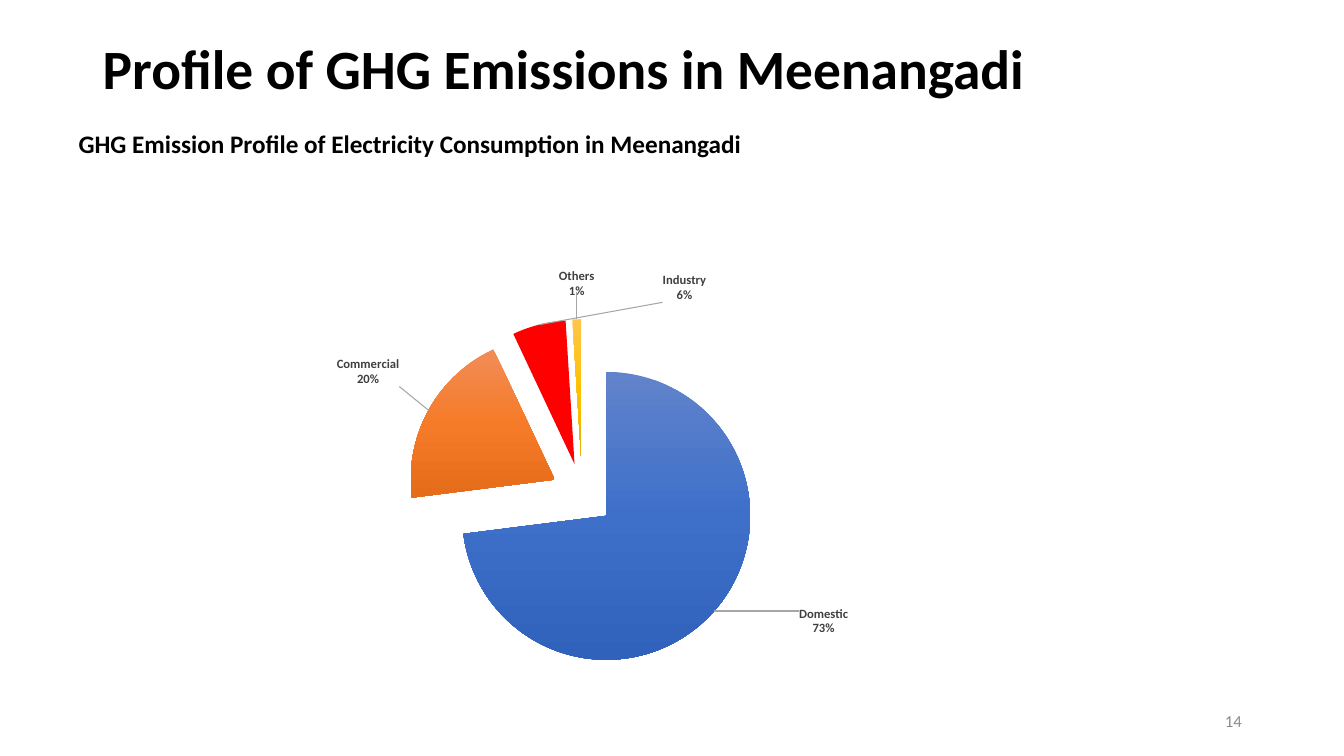
import pptx
import pptx.chart.data
import pptx.dml.color
import pptx.enum.chart
import pptx.enum.text
import pptx.oxml
import pptx.oxml.ns
import pptx.util
import copy
from pptx.util import Cm

COLORS = {"text": "000000", "label": "404040", "number": "8C8C8C", "leader": "A6A6A6"}
FONT = "Calibri"
qn = pptx.oxml.ns.qn


def set_font(font, size, color, bold=False):
    font.name, font.size, font.bold = FONT, pptx.util.Pt(size), bold
    font.color.rgb = pptx.dml.color.RGBColor.from_string(color)


def xml(tag, body="", attrs=""):
    spaces = pptx.oxml.ns.nsdecls("c", "a")
    return pptx.oxml.parse_xml(f"<c:{tag} {spaces} {attrs}>{body}</c:{tag}>")


prs = pptx.Presentation()
prs.slide_width, prs.slide_height = Cm(33.87), Cm(19.05)
s = prs.slides.add_slide(prs.slide_layouts[6])

# Title, subtitle and slide number
MIDDLE, TOP = pptx.enum.text.MSO_ANCHOR.MIDDLE, pptx.enum.text.MSO_ANCHOR.TOP
LEFT, RIGHT = pptx.enum.text.PP_ALIGN.LEFT, pptx.enum.text.PP_ALIGN.RIGHT
texts = [
    ("Profile of GHG Emissions in Meenangadi",
     (2.34, 1.02, 27.2, 1.57), 39.6, "text", True, MIDDLE, LEFT, 0.9),
    ("GHG Emission Profile of Electricity Consumption in Meenangadi",
     (1.73, 3.12, 29.11, 1.02), 18, "text", True, TOP, LEFT, 1.0),
    ("14", (23.93, 17.65, 7.62, 1.02), 12, "number", False, MIDDLE, RIGHT, 1.0),
]
for text, box, size, color, bold, anchor, align, spacing in texts:
    tf = s.shapes.add_textbox(*map(Cm, box)).text_frame
    tf.word_wrap, tf.vertical_anchor = True, anchor
    tf.text = text
    p = tf.paragraphs[0]
    p.alignment, p.line_spacing = align, spacing
    set_font(p.runs[0].font, size, COLORS[color], bold)

# Pie data: name, share, fill colours, label shift as a fraction of the chart
slices = [
    ("Domestic", 0.73, ["6183CB", "3E70CA", "3062BB"], (0.1, -0.02)),
    ("Commercial", 0.2, ["F18C57", "F67B28", "E56C19"], (-0.03, -0.05)),
    ("Industry", 0.06, ["FF0000"], (0.21, -0.04)),
    ("Others", 0.01, ["FFC64B", "FFC000", "E3AB00"], (0, -0.05)),
]
data = pptx.chart.data.CategoryChartData(number_format="0%")
data.categories = [item[0] for item in slices]
data.add_series("Series 1", [item[1] for item in slices])
chart = s.shapes.add_chart(pptx.enum.chart.XL_CHART_TYPE.PIE, Cm(4.14), Cm(6.78),
                           Cm(20.27), Cm(10.54), data).chart
chart.has_title = chart.has_legend = False
set_font(chart.font, 10, COLORS["text"])
plot = chart.plots[0]
plot.vary_by_categories = True
series = plot.series[0]
ser = series._element

# Labels shared by all slices
labels = series.data_labels
labels.show_value = labels.show_category_name = True
labels.show_percentage = False
labels.number_format, labels.number_format_is_linked = "0%", False
labels.position = pptx.enum.chart.XL_LABEL_POSITION.OUTSIDE_END
set_font(labels.font, 9, COLORS["label"], True)

# Slice fills and label places
for i, (name, share, fills, (dx, dy)) in enumerate(slices):
    point = series.points[i]
    point.format.line.fill.background()
    fill = point.format.fill
    if len(fills) == 1:
        fill.solid()
        fill.fore_color.rgb = pptx.dml.color.RGBColor.from_string(fills[0])
    else:
        fill.gradient()
        fill.gradient_angle = 270
        stops = list(ser.iter(qn("a:gsLst")))[-1]
        stops.insert(1, copy.deepcopy(stops[0]))
        for stop, position, color in zip(fill.gradient_stops, (0, 0.5, 1), fills):
            stop.position = position
            stop.color.rgb = pptx.dml.color.RGBColor.from_string(color)

    label = point.data_label
    set_font(label.font, 9, COLORS["label"], True)
    label.position = pptx.enum.chart.XL_LABEL_POSITION.OUTSIDE_END
    d = list(ser.iter(qn("c:dLbl")))[-1]
    d.insert(1, xml("layout", f'<c:manualLayout><c:x val="{dx}"/><c:y val="{dy}"/></c:manualLayout>'))
    d.insert(2, xml("numFmt", attrs='formatCode="0%" sourceLinked="0"'))
    d.find(qn("c:showCatName")).set("val", "1")
    d.append(xml("separator", "\n"))

# Leader lines
group = ser.find(qn("c:dLbls"))
for old in group.findall(qn("c:showLeaderLines")):
    group.remove(old)
group.append(xml("separator", "\n"))
group.append(xml("showLeaderLines", attrs='val="1"'))
group.append(xml("leaderLines", '<c:spPr><a:ln w="9525"><a:solidFill><a:srgbClr val="'
                 + COLORS["leader"] + '"/></a:solidFill></a:ln></c:spPr>'))

# Pulled-out slices and plot area
ser.find(qn("c:dPt")).addprevious(xml("explosion", attrs='val="22"'))
area = next(chart._chartSpace.iter(qn("c:plotArea")))
for old in area.findall(qn("c:layout")):
    area.remove(old)
places = "".join(f'<c:{k} val="{v}"/>' for k, v in [
    ("layoutTarget", "inner"), ("xMode", "edge"), ("yMode", "edge"),
    ("x", 0.3), ("y", 0.12), ("w", 0.44), ("h", 0.84)])
area.insert(0, xml("layout", f"<c:manualLayout>{places}</c:manualLayout>"))

prs.save("out.pptx")
